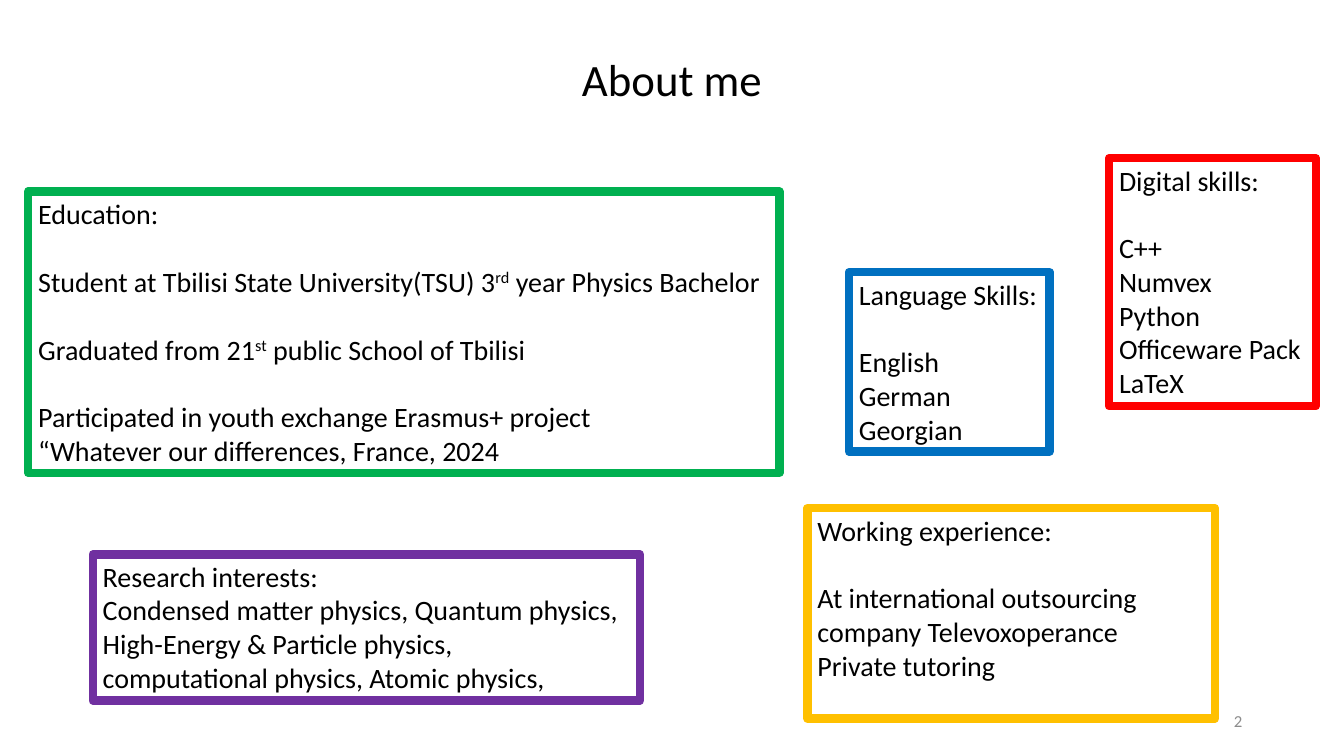
"""Build the "About me" slide with its five framed panels."""
import pptx
import pptx.dml.color
import pptx.enum.shapes
import pptx.enum.text
import pptx.util

Inches = pptx.util.Inches
Pt = pptx.util.Pt
RGBColor = pptx.dml.color.RGBColor
PP_ALIGN = pptx.enum.text.PP_ALIGN
MSO_ANCHOR = pptx.enum.text.MSO_ANCHOR

FONT = "Calibri"
BLACK = RGBColor(0x00, 0x00, 0x00)
GREY = RGBColor(0x8C, 0x8C, 0x8C)
BLUE = RGBColor(0x00, 0x70, 0xC0)
RED = RGBColor(0xFF, 0x00, 0x00)
PURPLE = RGBColor(0x70, 0x30, 0xA0)
GREEN = RGBColor(0x00, 0xB0, 0x50)
AMBER = RGBColor(0xFF, 0xC0, 0x00)

BODY_SIZE = 20
LINE_HEIGHT = 24.4

PANELS = [
    (GREEN, (0.28, 1.9, 7.45, 2.79), [
        ["Education:"],
        ["Student at Tbilisi State University(TSU) 3^rd^ year Physics Bachelor"],
        ["Graduated from 21^st^ public School of Tbilisi"],
        ["Participated in youth exchange Erasmus+ project",
         "“Whatever our differences, France, 2024"],
    ]),
    (BLUE, (8.42, 2.7, 1.99, 1.78), [
        ["Language Skills:"],
        ["English", "German", "Georgian"],
    ]),
    (RED, (11, 1.57, 2.05, 2.46), [
        ["Digital skills:"],
        ["C++", "Numvex", "Python", "Officeware Pack", "LaTeX"],
    ]),
    (PURPLE, (0.92, 5.5, 5.43, 1.45), [
        ["Research interests:",
         "Condensed matter physics, Quantum physics,",
         "High-Energy & Particle physics,",
         "computational physics, Atomic physics,"],
    ]),
    (AMBER, (8.01, 5.04, 4.04, 2.09), [
        ["Working experience:"],
        ["At international outsourcing company Televoxoperance",
         "Private tutoring"],
    ]),
]


def add_run(paragraph, text, size, color, raised=False):
    """Append one styled run, optionally as superscript."""
    run = paragraph.add_run()
    run.text = text
    run.font.name = FONT
    run.font.size = Pt(size)
    run.font.color.rgb = color
    if raised:
        run.font._element.set("baseline", "30000")


def add_label(slide, box, text, size, color, align, anchor):
    """Place a single line of text in the given box."""
    label = slide.shapes.add_textbox(*map(Inches, box))
    label.text_frame.word_wrap = True
    label.text_frame.vertical_anchor = anchor
    paragraph = label.text_frame.paragraphs[0]
    paragraph.alignment = align
    add_run(paragraph, text, size, color)


def add_panel(slide, box, color, groups):
    """Draw a framed panel whose groups of lines are one line apart."""
    panel = slide.shapes.add_shape(
        pptx.enum.shapes.MSO_SHAPE.RECTANGLE, *map(Inches, box))
    panel.shadow.inherit = False
    panel.fill.background()
    panel.line.color.rgb = color
    panel.line.width = Pt(6)
    frame = panel.text_frame
    frame.word_wrap = True
    frame.vertical_anchor = MSO_ANCHOR.TOP
    paragraph = frame.paragraphs[0]
    for group_index, group in enumerate(groups):
        for line_index, line in enumerate(group):
            if group_index or line_index:
                paragraph = frame.add_paragraph()
            paragraph.alignment = PP_ALIGN.LEFT
            if group_index and not line_index:
                paragraph.space_before = Pt(LINE_HEIGHT)
            for part_index, part in enumerate(line.split("^")):
                add_run(paragraph, part, BODY_SIZE, BLACK, part_index % 2 == 1)


def build_about_slide(presentation):
    """Add the slide with its title, panels and page number."""
    slide = presentation.slides.add_slide(presentation.slide_layouts[6])
    add_label(slide, (5.32, 0.46, 2.69, 0.64), "About me", 32, BLACK,
              PP_ALIGN.CENTER, MSO_ANCHOR.TOP)
    for color, box, groups in PANELS:
        add_panel(slide, box, color, groups)
    add_label(slide, (9.42, 6.95, 3, 0.4), "2", 12, GREY,
              PP_ALIGN.RIGHT, MSO_ANCHOR.MIDDLE)


def main():
    """Create and save the presentation."""
    presentation = pptx.Presentation()
    presentation.slide_width = Inches(13.33)
    presentation.slide_height = Inches(7.5)
    build_about_slide(presentation)
    presentation.save("out.pptx")


if __name__ == "__main__":
    main()
